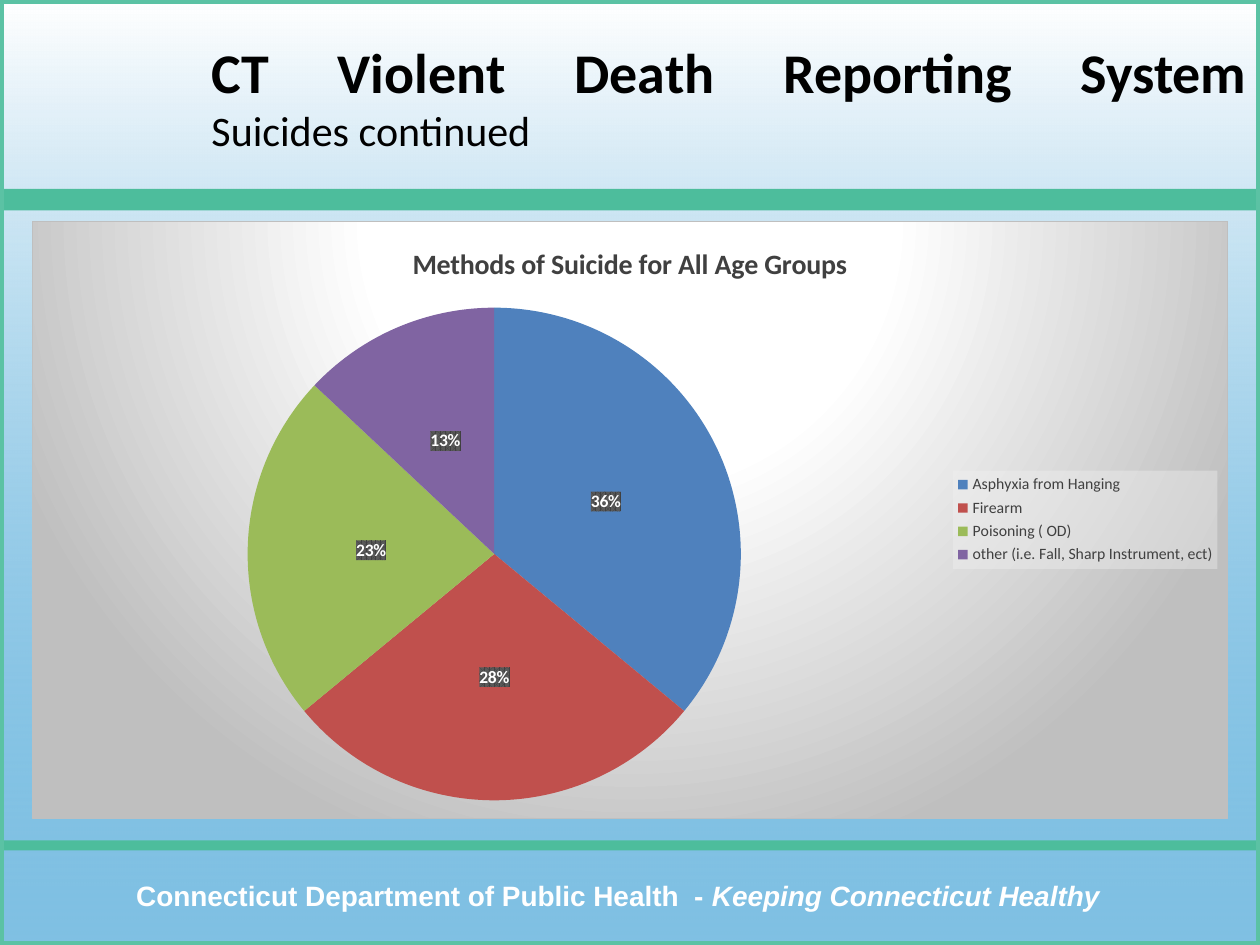
from lxml import etree
from pptx import Presentation, util as u
from pptx.chart.data import CategoryChartData
from pptx.dml.color import RGBColor
from pptx.enum import chart as ch, shapes, text
from pptx.oxml import ns

# Content
TITLE = [("CT Violent Death Reporting System", 32, True), ("Suicides continued", 24, False)]
FOOT = [("Connecticut Department of Public Health  - ", False),
        ("Keeping Connecticut Healthy", True)]
HEAD = "Methods of Suicide for All Age Groups"
DATA = [("Asphyxia from Hanging", 36, "4F81BD"),
        ("Firearm", 28, "C0504D"),
        ("Poisoning ( OD)", 23, "9BBB59"),
        ("other (i.e. Fall, Sharp Instrument, ect)", 13, "8064A2")]
BARS = [(6.67, 0.08), (1.5, 0.17)]  # top, height
PIE = {"x": 0.18, "y": 0.145, "w": 0.413, "h": 0.825}


class Theme:
    font, foot = "Calibri", "Arial"
    black, white, grey = "000000", "FFFFFF", "404040"
    blue, green, edge, rim = "0082C8", "4DBD9C", "5BC2A4", "BFBFBF"
    dark, pale = "595959", "F2F2F2"
    head, note, label, key = 16, 16, 10, 9


def xml(tag, body, attrs=""):
    return etree.fromstring(f"<{tag} {ns.nsdecls('a', 'c')} {attrs}>{body}</{tag}>")


def rgb(tone, alpha=100):
    return f'<a:srgbClr val="{tone}"><a:alpha val="{alpha * 1000}"/></a:srgbClr>'


def grad(stops, way):
    rows = "".join(f'<a:gs pos="{pos * 1000}">{rgb(*tone)}</a:gs>' for pos, *tone in stops)
    return f"<a:gsLst>{rows}</a:gsLst>{way}"


def style(font, size, tone, bold=False, italic=False, name=Theme.font):
    font.size, font.bold, font.italic, font.name = u.Pt(size), bold, italic, name
    font.color.rgb = RGBColor.from_string(tone)


def write(para, words, **form):
    run = para.add_run()
    run.text = words
    style(run.font, **form)


def rect(top, high, fill=None, line=None):
    shape = slide.shapes.add_shape(shapes.MSO_SHAPE.RECTANGLE, 0, u.Inches(top),
                                   deck.slide_width, u.Inches(high))
    shape.shadow.inherit = False
    if fill:
        shape.fill.solid()
        shape.fill.fore_color.rgb = RGBColor.from_string(fill)
    else:
        shape.fill.background()
    if line:
        shape.line.color.rgb = RGBColor.from_string(line)
        shape.line.width = u.Pt(4.5)
    else:
        shape.line.fill.background()
    return shape


def box(place, align):
    frame = slide.shapes.add_textbox(*map(u.Inches, place)).text_frame
    frame.word_wrap = True
    frame.vertical_anchor = text.MSO_ANCHOR.MIDDLE
    frame.paragraphs[0].alignment = align
    return frame.paragraphs[0]


def paint(part, body):
    """Give a chart part its fill, just ahead of its text format."""
    part.find(ns.qn("c:txPr")).addprevious(xml("c:spPr", body))


deck = Presentation()
deck.slide_width, deck.slide_height = u.Inches(10), u.Inches(7.5)
slide = deck.slides.add_slide(deck.slide_layouts[6])

# Backdrop, bars and frame
back = rect(0, 7.5, Theme.white)
solid = back._element.spPr.find(ns.qn("a:solidFill"))
fade = grad([(0, Theme.blue, 50), (100, Theme.white)], '<a:lin ang="16200000" scaled="0"/>')
solid.getparent().replace(solid, xml("a:gradFill", fade, 'rotWithShape="1"'))
for top, high in BARS:
    rect(top, high, Theme.green)
rect(0, 7.5, line=Theme.edge)

# Footer and title
para = box((0.49, 6.92, 8.83, 0.37), text.PP_ALIGN.CENTER)
for words, slant in FOOT:
    write(para, words, size=Theme.note, tone=Theme.white, bold=True,
          italic=slant, name=Theme.foot)
para = box((1.58, 0.03, 8.42, 1.47), text.PP_ALIGN.JUSTIFY)
for row, (words, size, bold) in enumerate(TITLE):
    if row:
        para.add_line_break()
    write(para, words, size=size, tone=Theme.black, bold=bold)

# Pie chart
names, vals, tones = zip(*DATA)
data = CategoryChartData()
data.categories = names
data.add_series("Series 1", vals)
place = map(u.Inches, (0.25, 1.75, 9.5, 4.75))
chart = slide.shapes.add_chart(ch.XL_CHART_TYPE.PIE, *place, data).chart
style(chart.font, Theme.label, Theme.black)
chart.has_title = True
write(chart.chart_title.text_frame.paragraphs[0], HEAD,
      size=Theme.head, tone=Theme.grey, bold=True)
plot = chart.plots[0]
plot.vary_by_categories = True
for spot, tone in enumerate(tones):
    fill = plot.series[0].points[spot].format.fill
    fill.solid()
    fill.fore_color.rgb = RGBColor.from_string(tone)

# Labels and legend
plot.has_data_labels = True
tags = plot.data_labels
tags.show_value, tags.show_percentage = False, True
tags.number_format, tags.number_format_is_linked = "0%", False
tags.position = ch.XL_LABEL_POSITION.CENTER
style(tags.font, Theme.label, Theme.white, bold=True)
paint(tags._element, f'<a:pattFill prst="pct75"><a:fgClr>{rgb(Theme.grey)}</a:fgClr>'
                     f'<a:bgClr>{rgb(Theme.dark)}</a:bgClr></a:pattFill>')
chart.has_legend = True
key = chart.legend
key.position, key.include_in_layout = ch.XL_LEGEND_POSITION.RIGHT, False
style(key.font, Theme.key, Theme.grey)
paint(key._element, f'<a:solidFill>{rgb(Theme.pale, 39)}</a:solidFill>')

# Chart area and pie position
glow = grad([(0, Theme.white), (39, Theme.white), (100, Theme.rim)],
            '<a:path path="circle"><a:fillToRect l="50000" t="-80000" r="50000" b="180000"/></a:path>')
paint(chart._chartSpace, f'<a:gradFill>{glow}</a:gradFill>'
                         f'<a:ln w="9525"><a:solidFill>{rgb(Theme.rim)}</a:solidFill></a:ln>')
area = chart._chartSpace.chart.plotArea
for old in area.findall(ns.qn("c:layout")):
    area.remove(old)
modes = '<c:layoutTarget val="inner"/><c:xMode val="edge"/><c:yMode val="edge"/>'
sizes = "".join(f'<c:{side} val="{part}"/>' for side, part in PIE.items())
area.insert(0, xml("c:layout", f"<c:manualLayout>{modes}{sizes}</c:manualLayout>"))

deck.save("out.pptx")
